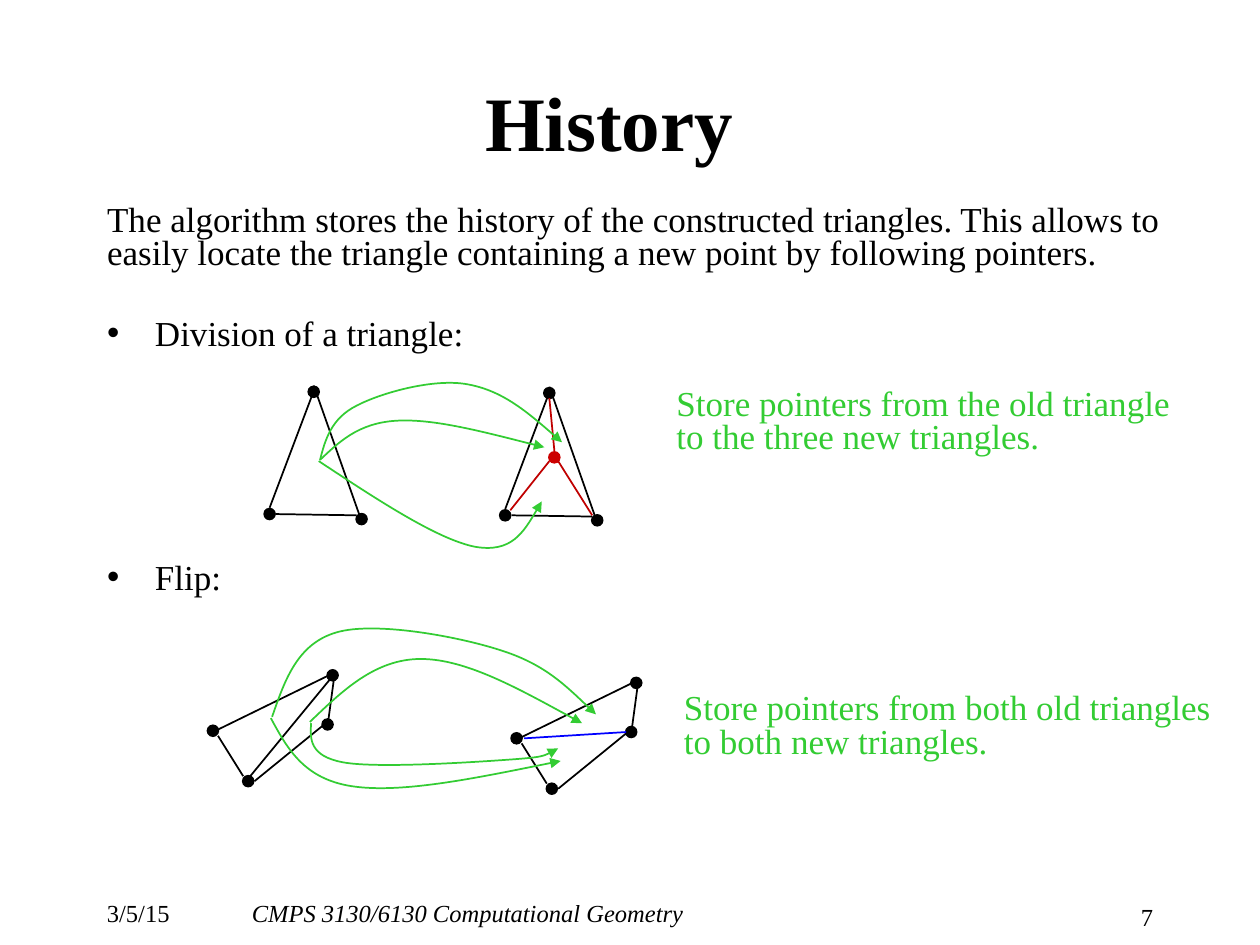
"""Build the slide on the triangle history with its division and flip diagrams."""
from lxml import etree
from pptx import Presentation
from pptx import util as u
from pptx.dml.color import RGBColor
from pptx.enum import shapes, text
from pptx.oxml.ns import qn

BLACK = RGBColor(0x00, 0x00, 0x00)
GREEN = RGBColor(0x33, 0xCC, 0x33)
RED = RGBColor(0xCC, 0x00, 0x00)
DARK_RED = RGBColor(0xC0, 0x00, 0x00)
BLUE = RGBColor(0x00, 0x00, 0xFF)
FONT = "Times New Roman"
DOT = 0.1

TITLE = "History"
BODY = [
    ("The algorithm stores the history of the constructed triangles. This allows to "
     "easily locate the triangle containing a new point by following pointers.", False, 4),
    ("Division of a triangle:", True, 27),
    ("Flip:", True, 120),
]
NOTES = [
    ((5.27, 3.04, 4.14, 0.64),
     ["Store pointers from the old triangle", "to the three new triangles."]),
    ((5.33, 5.46, 4.41, 0.64),
     ["Store pointers from both old triangles", "to both new triangles."]),
]
FOOTER = [
    ((0.75, 7.08, 0.95, 0.25), "3/5/15", False, text.PP_ALIGN.LEFT),
    ((1.9, 7.08, 6.34, 0.25), "CMPS 3130/6130 Computational Geometry", True, text.PP_ALIGN.LEFT),
    ((8.51, 7.11, 0.74, 0.22), "7", False, text.PP_ALIGN.RIGHT),
]

TRIANGLE = {
    "corners": [(2.44, 3.06), (2.82, 4.07), (2.09, 4.03)],
    "edges": [(2.83, 4.09, 2.19, 4.08), (2.14, 4.03, 2.48, 3.13), (2.85, 4.08, 2.49, 3.06)],
    "shifts": [(0, 0), (1.87, 0.01)],
}
QUADRILATERAL = {
    "corners": [(1.92, 6.15), (1.64, 5.75), (2.55, 5.7), (2.59, 5.31)],
    "edges": [(1.93, 6.16, 1.73, 5.84), (1.71, 5.8, 2.63, 5.35),
              (2.02, 6.2, 2.61, 5.72), (2.6, 5.76, 2.65, 5.39)],
    "shifts": [(0, 0), (2.41, 0.06)],
}
NEW_POINT = (4.35, 3.58)
INNER_EDGES = [
    ((4.4, 3.58, 4.36, 3.16), DARK_RED),
    ((4.05, 4.05, 4.36, 3.66), DARK_RED),
    ((4.7, 4.09, 4.43, 3.66), DARK_RED),
    ((1.97, 6.18, 2.67, 5.33), BLACK),
    ((4.16, 5.86, 4.97, 5.81), BLUE),
]
POINTERS = [
    [(2.54, 3.65), (2.69, 3.51), (2.84, 3.36), (3.14, 3.34),
     (3.44, 3.32), (3.88, 3.44), (4.32, 3.55)],
    [(2.53, 3.66), (3, 3.97), (3.47, 4.28), (3.77, 4.34),
     (4.06, 4.39), (4.18, 4.19), (4.3, 3.98)],
    [(2.54, 3.65), (2.58, 3.49), (2.63, 3.32), (2.83, 3.22), (3.02, 3.12),
     (3.44, 3), (3.71, 3.05), (3.99, 3.1), (4.22, 3.3), (4.46, 3.51)],
    [(2.16, 5.69), (2.26, 5.4), (2.36, 5.11), (2.67, 5.02), (2.97, 4.93),
     (3.63, 5.05), (3.97, 5.16), (4.32, 5.27), (4.52, 5.47), (4.73, 5.67)],
    [(2.46, 5.73), (2.72, 5.48), (2.98, 5.23), (3.34, 5.23),
     (3.7, 5.23), (4.16, 5.49), (4.62, 5.74)],
    [(2.15, 5.7), (2.28, 5.94), (2.41, 6.18), (2.79, 6.24),
     (3.18, 6.3), (3.81, 6.17), (4.45, 6.04)],
    [(2.47, 5.74), (2.46, 5.87), (2.46, 6), (2.72, 6.05), (2.98, 6.1),
     (3.75, 6.05), (4.03, 6.03), (4.32, 6.01), (4.37, 5.98), (4.43, 5.94)],
]


def inches(values):
    return [u.Inches(value) for value in values]


def place(holder, box):
    holder.left, holder.top, holder.width, holder.height = inches(box)


def add_run(paragraph, words, size, color=BLACK, bold=False, italic=False):
    run = paragraph.add_run()
    run.text = words
    run.font.name, run.font.size = FONT, u.Pt(size)
    run.font.bold, run.font.italic = bold, italic
    run.font.color.rgb = color


def add_dot(slide, corner, color=BLACK):
    dot = slide.shapes.add_shape(shapes.MSO_SHAPE.OVAL, *inches((*corner, DOT, DOT)))
    dot.shadow.inherit = False
    dot.fill.solid()
    dot.fill.fore_color.rgb = color
    dot.line.fill.background()


def add_edge(slide, ends, color=BLACK):
    edge = slide.shapes.add_connector(shapes.MSO_CONNECTOR.STRAIGHT, *inches(ends))
    edge.line.color.rgb = color
    edge.line.width = u.Pt(1)
    etree.SubElement(edge._element.spPr, qn("a:effectLst"))


def add_figure(slide, figure):
    for dx, dy in figure["shifts"]:
        for x, y in figure["corners"]:
            add_dot(slide, (x + dx, y + dy))
        for x1, y1, x2, y2 in figure["edges"]:
            add_edge(slide, (x1 + dx, y1 + dy, x2 + dx, y2 + dy))


def add_pointer(slide, points):
    start, *controls = [inches(point) for point in points]
    builder = slide.shapes.build_freeform(*start)
    builder.add_line_segments(controls, close=False)
    pointer = builder.convert_to_shape()
    pointer.shadow.inherit = False
    pointer.fill.background()
    pointer.line.color.rgb = GREEN
    pointer.line.width = u.Pt(1)
    properties = pointer._element.spPr
    etree.SubElement(properties.find(qn("a:ln")), qn("a:tailEnd"), type="triangle")
    segments = list(properties.iter(qn("a:lnTo")))
    outline = segments[0].getparent()
    for first in range(0, len(segments), 3):
        curve = etree.SubElement(outline, qn("a:cubicBezTo"))
        for segment in segments[first:first + 3]:
            curve.append(segment[0])
            outline.remove(segment)


def add_body(body):
    place(body, (0.75, 1.58, 8.78, 1.74))
    frame = body.text_frame
    frame.auto_size = text.MSO_AUTO_SIZE.NONE
    for index, (words, bulleted, gap) in enumerate(BODY):
        paragraph = frame.add_paragraph() if index else frame.paragraphs[0]
        paragraph.line_spacing = 0.8
        paragraph.space_before = u.Pt(gap)
        indent = u.Inches(0.38) if bulleted else 0
        properties = paragraph._p.get_or_add_pPr()
        properties.set("marL", str(indent))
        properties.set("indent", str(-indent))
        if bulleted:
            etree.SubElement(properties, qn("a:buChar"), char="•")
        else:
            etree.SubElement(properties, qn("a:buNone"))
        add_run(paragraph, words, 20)


def main():
    deck = Presentation()
    deck.slide_width, deck.slide_height = inches((10, 7.5))
    slide = deck.slides.add_slide(deck.slide_layouts[1])

    title = slide.shapes.title
    place(title, (0.71, 0.33, 8.25, 1.25))
    title.text_frame.vertical_anchor = text.MSO_ANCHOR.MIDDLE
    heading = title.text_frame.paragraphs[0]
    heading.alignment = text.PP_ALIGN.CENTER
    add_run(heading, TITLE, 44, bold=True)
    add_body(slide.placeholders[1])

    for box, words, italic, alignment in FOOTER:
        footer = slide.shapes.add_textbox(*inches(box)).text_frame
        footer.word_wrap = True
        footer.paragraphs[0].alignment = alignment
        add_run(footer.paragraphs[0], words, 14, italic=italic)

    for figure in (TRIANGLE, QUADRILATERAL):
        add_figure(slide, figure)
    add_dot(slide, NEW_POINT, RED)
    for ends, color in INNER_EDGES:
        add_edge(slide, ends, color)
    for points in POINTERS:
        add_pointer(slide, points)

    for box, lines in NOTES:
        note = slide.shapes.add_textbox(*inches(box)).text_frame
        note.word_wrap = False
        paragraph = note.paragraphs[0]
        paragraph.line_spacing = 0.8
        paragraph.space_before = u.Pt(4)
        for index, line in enumerate(lines):
            if index:
                paragraph.add_line_break()
            add_run(paragraph, line, 20, GREEN)

    deck.save("out.pptx")


if __name__ == "__main__":
    main()
